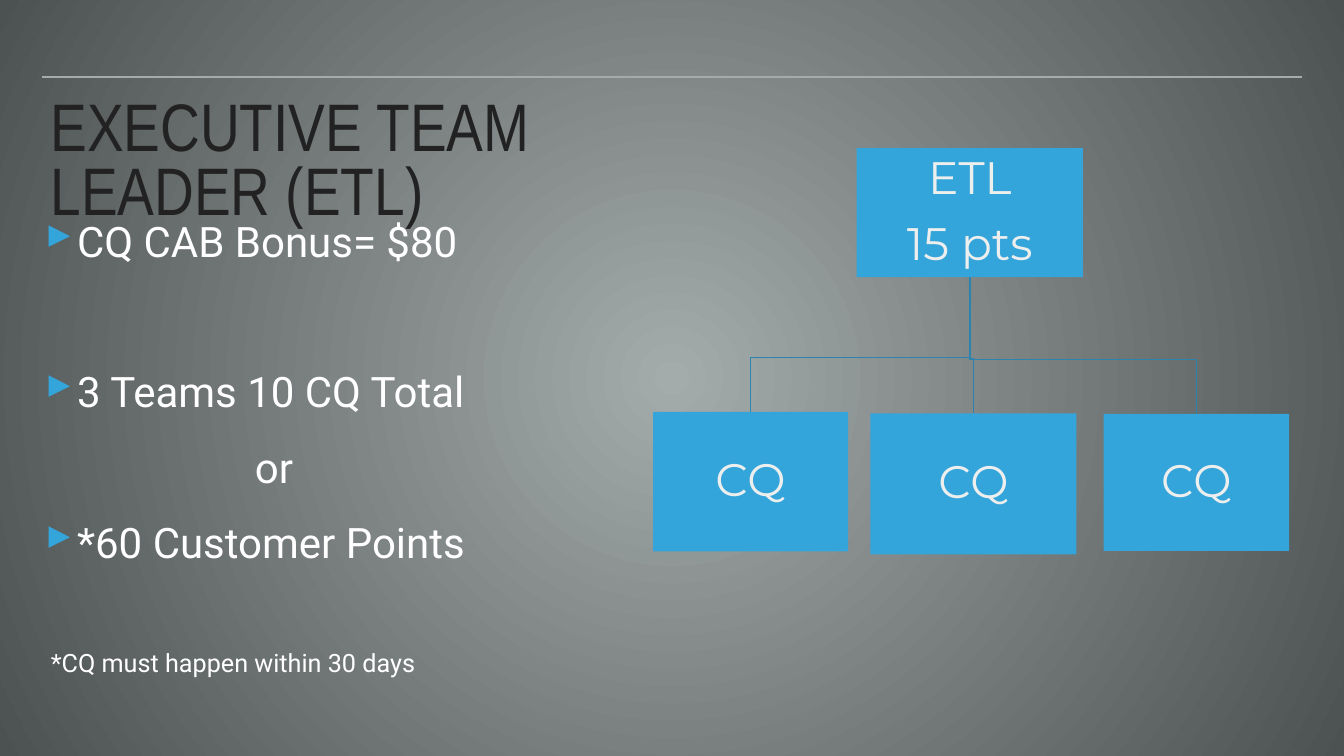
"""Builds the Executive Team Leader slide with its bonus rules and team chart."""
import pptx
import pptx.dml.color
import pptx.enum.shapes
import pptx.enum.text
import pptx.oxml
import pptx.oxml.ns
import pptx.util
from pptx.util import Inches, Pt

COLOURS = {
    "centre": "A4ABAB", "edge": "4C5151", "rule": "A6AAA9", "title": "222222",
    "body": "FFFFFF", "box": "34A5DA", "branch": "2A84AF", "label": "EDEEEE",
}
TITLE = "EXECUTIVE TEAM LEADER (ETL)"
REQUIREMENTS = [
    {"text": "CQ CAB Bonus= $80", "size": 60, "before": 0, "bullet": True},
    {"text": "3 Teams 10 CQ Total", "size": 60, "before": 142, "bullet": True},
    {"text": "or", "size": 60, "before": 36, "indent": 4.17},
    {"text": "*60 Customer Points", "size": 60, "before": 36, "bullet": True},
    {"text": "*CQ must happen within 30 days", "size": 36, "before": 115, "indent": 0.12},
]
LEADER = (["ETL", "15 pts"], (17, 2.94, 4.49, 2.56))
TEAMS = [
    (["CQ"], (12.96, 8.17, 3.87, 2.77)),
    (["CQ"], (17.27, 8.2, 4.09, 2.8)),
    (["CQ"], (21.9, 8.21, 3.68, 2.72)),
]
BRANCH_DROP = 1.08


def colour(name):
    return pptx.dml.color.RGBColor.from_string(COLOURS[name])


def style(paragraph, font, size, name):
    for run in paragraph.runs:
        run.font.name = font
        run.font.size = Pt(size)
        run.font.color.rgb = colour(name)


def set_insets(frame, inset):
    frame.word_wrap = True
    frame.margin_left = frame.margin_right = Inches(inset)
    frame.margin_top = frame.margin_bottom = Inches(inset)


def add_text_area(slide, place):
    frame = slide.shapes.add_textbox(*map(Inches, place)).text_frame
    set_insets(frame, 0.06)
    return frame


def set_indent(paragraph, left, bullet):
    properties = paragraph._p.get_or_add_pPr()
    properties.set("marL", str(Inches(left)))
    properties.set("indent", str(Inches(-left) if bullet else 0))
    if bullet:
        namespace = pptx.oxml.ns.nsdecls("a")
        for xml in (
            f'<a:buClr {namespace}><a:srgbClr val="{COLOURS["box"]}"/></a:buClr>',
            f'<a:buSzPct {namespace} val="105000"/>',
            f'<a:buChar {namespace} char="▸"/>',
        ):
            properties.append(pptx.oxml.parse_xml(xml))


def add_background(slide):
    fill = slide.background.fill
    fill.gradient()
    for stop, name in zip(fill.gradient_stops, ("centre", "edge")):
        stop.color.rgb = colour(name)
    linear = slide.element.find(".//" + pptx.oxml.ns.qn("a:lin"))
    linear.getparent().replace(linear, pptx.oxml.parse_xml(
        f'<a:path {pptx.oxml.ns.nsdecls("a")} path="circle">'
        '<a:fillToRect l="50000" t="50000" r="50000" b="50000"/></a:path>'))


def add_rule(slide):
    rule = slide.shapes.add_connector(
        pptx.enum.shapes.MSO_CONNECTOR.STRAIGHT,
        *map(Inches, (0.83, 1.53, 25.83, 1.53)))
    rule.line.color.rgb = colour("rule")
    rule.line.width = Pt(2)
    rule._element.spPr.append(pptx.oxml.parse_xml(
        f'<a:effectLst {pptx.oxml.ns.nsdecls("a")}/>'))


def add_requirements(slide):
    frame = add_text_area(slide, (0.83, 4.22, 11.3, 9.39))
    for index, item in enumerate(REQUIREMENTS):
        paragraph = frame.add_paragraph() if index else frame.paragraphs[0]
        paragraph.text = item["text"]
        paragraph.space_before = Pt(item["before"])
        set_indent(paragraph, item.get("indent", 0.64), item.get("bullet", False))
        style(paragraph, "Roboto", item["size"], "body")


def add_branch(slide, leader_place, team_place):
    left, top, width, height = leader_place
    start_x, start_y = left + width / 2, top + height
    end_x, end_y = team_place[0] + team_place[2] / 2, team_place[1]
    turn_y = end_y - BRANCH_DROP
    builder = slide.shapes.build_freeform(Inches(start_x), Inches(start_y))
    corners = [(start_x, turn_y), (end_x, turn_y), (end_x, end_y)]
    builder.add_line_segments(
        [(Inches(x), Inches(y)) for x, y in corners], close=False)
    branch = builder.convert_to_shape()
    branch.shadow.inherit = False
    branch.fill.background()
    branch.line.color.rgb = colour("branch")
    branch.line.width = Pt(2)


def add_box(slide, lines, place):
    box = slide.shapes.add_shape(
        pptx.enum.shapes.MSO_SHAPE.RECTANGLE, *map(Inches, place))
    box.shadow.inherit = False
    box.fill.solid()
    box.fill.fore_color.rgb = colour("box")
    box.line.fill.background()
    frame = box.text_frame
    set_insets(frame, 0.05)
    frame.vertical_anchor = pptx.enum.text.MSO_ANCHOR.MIDDLE
    frame.text = "\n".join(lines)
    for paragraph in frame.paragraphs:
        paragraph.alignment = pptx.enum.text.PP_ALIGN.CENTER
        paragraph.line_spacing = 0.9
        paragraph.space_after = Pt(23)
        style(paragraph, "Montserrat", 65, "label")


def main():
    deck = pptx.Presentation()
    deck.slide_width, deck.slide_height = Inches(26.67), Inches(15)
    slide = deck.slides.add_slide(deck.slide_layouts[6])
    add_background(slide)
    add_rule(slide)

    title = add_text_area(slide, (0.94, 1.92, 14.01, 2.3))
    title.text = TITLE
    title.paragraphs[0].line_spacing = 0.8
    style(title.paragraphs[0], "Arial Narrow", 96, "title")
    add_requirements(slide)

    for _, place in reversed(TEAMS):
        add_branch(slide, LEADER[1], place)
    for lines, place in [LEADER, *TEAMS]:
        add_box(slide, lines, place)
    deck.save("out.pptx")


if __name__ == "__main__":
    main()
